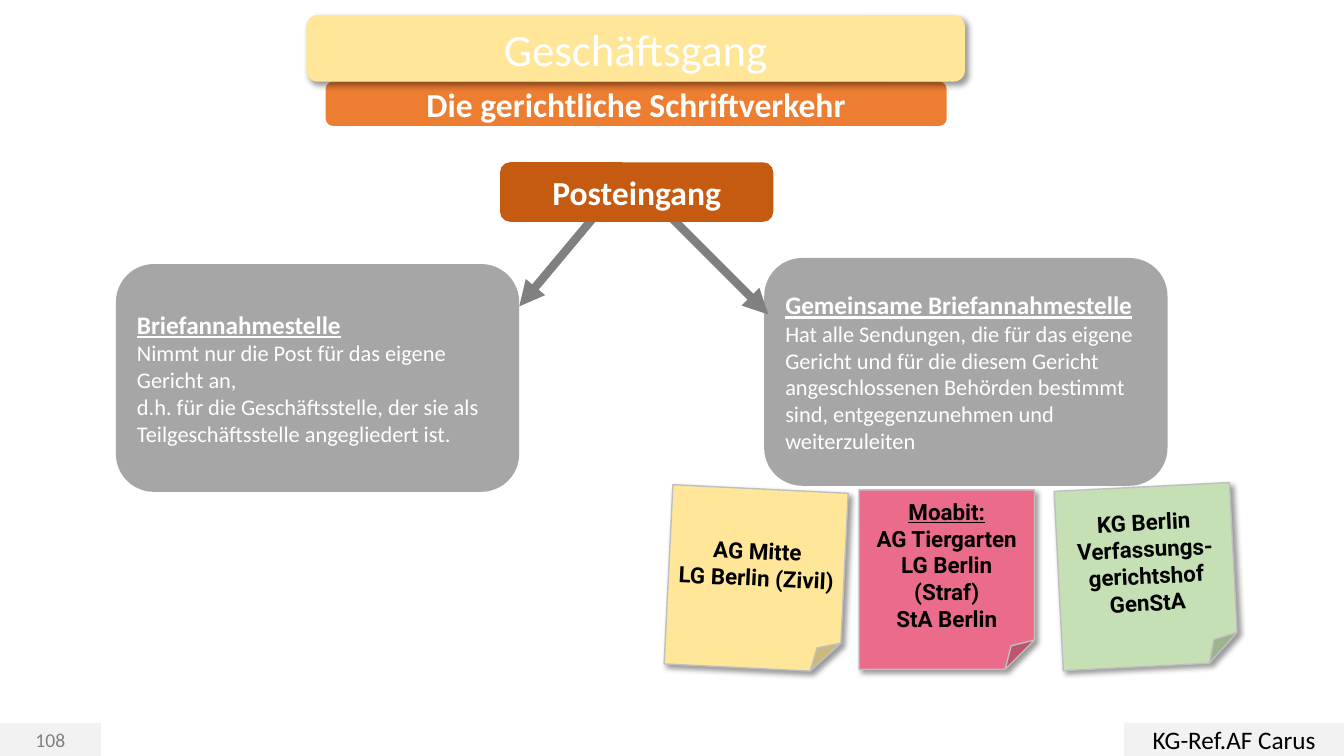
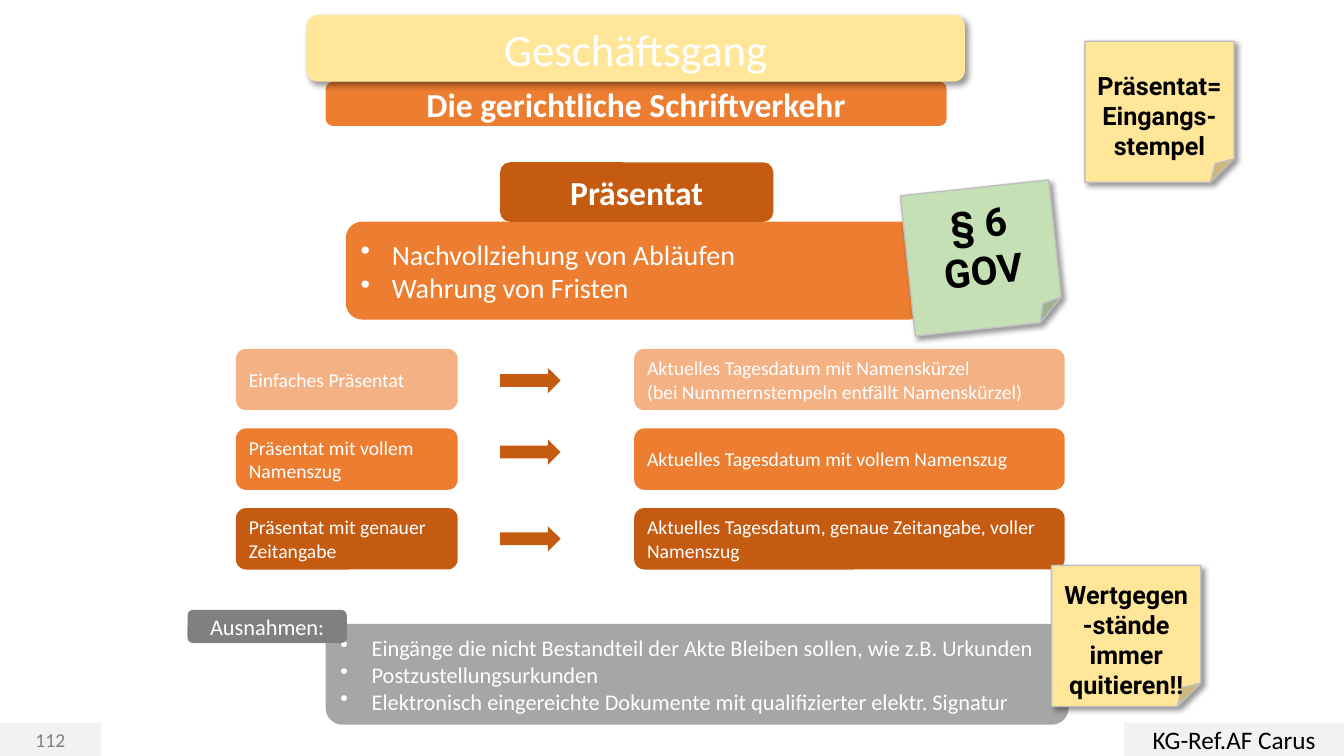
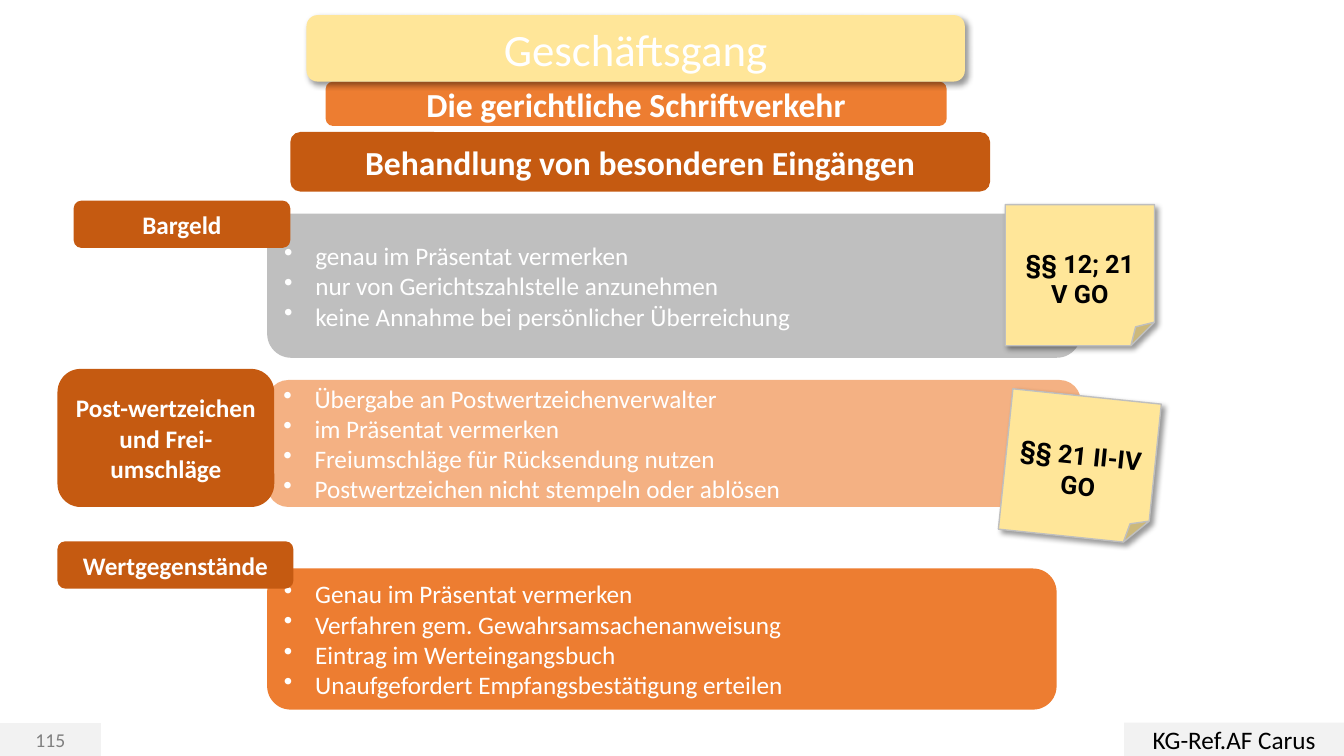
from lxml import etree
from pptx import Presentation
from pptx.dml.color import RGBColor
from pptx.enum import shapes, text
from pptx.oxml import ns
from pptx.util import Inches, Pt

COLORS = {
    "white": "FFFFFF", "black": "000000", "band": "F2F2F2",
    "yellow": "FFE699", "pink": "EA6C8A", "green": "C5E0B4",
    "peach": "F4B183", "orange": "ED7D31", "rust": "C55A11",
    "silver": "BFBFBF", "gray": "A6A6A6", "dark": "808080",
}
ROUND = shapes.MSO_SHAPE.ROUNDED_RECTANGLE
RECT = shapes.MSO_SHAPE.RECTANGLE
FOLD = shapes.MSO_SHAPE.FOLDED_CORNER
ARROW = shapes.MSO_SHAPE.RIGHT_ARROW
LEFT = text.PP_ALIGN.LEFT
CENTER = text.PP_ALIGN.CENTER


def add_box(page, area, fill, words="", size=18, kind=ROUND, bold=False, align=CENTER,
            color="white", font="Calibri", line=None, bullets=False, shadow=False):
    box = page.shapes.add_shape(kind, *[Inches(value) for value in area])
    box.fill.solid()
    box.fill.fore_color.rgb = RGBColor.from_string(COLORS[fill])
    if line:
        box.line.color.rgb = RGBColor.from_string(COLORS[line])
        box.line.width = Pt(1)
    else:
        box.line.fill.background()
    box.shadow.inherit = False
    if shadow:
        effects = box._element.spPr.find(ns.qn("a:effectLst"))
        outer = etree.SubElement(effects, ns.qn("a:outerShdw"), blurRad=str(Pt(4)),
                                 dist=str(Pt(3)), dir="2700000", algn="tl", rotWithShape="0")
        tint = etree.SubElement(outer, ns.qn("a:srgbClr"), val=COLORS["black"])
        etree.SubElement(tint, ns.qn("a:alpha"), val="40000")
    frame = box.text_frame
    frame.word_wrap = True
    frame.vertical_anchor = text.MSO_ANCHOR.MIDDLE
    frame.text = words
    for para in frame.paragraphs:
        para.alignment = align
        if bullets:
            properties = para._p.get_or_add_pPr()
            properties.set("marL", str(Inches(0.31)))
            properties.set("indent", str(-Inches(0.31)))
            etree.SubElement(properties, ns.qn("a:buChar"), char="•")
        for span in para.runs:
            span.font.name = font
            span.font.size = Pt(size)
            span.font.bold = bold
            span.font.color.rgb = RGBColor.from_string(COLORS[color])
    return box


def add_note(page, area, fill, words, size=18, turn=0, top=0.05):
    note = add_box(page, area, fill, words, size, FOLD, bold=True, color="black",
                   font="Roboto", line="silver", shadow=True)
    note.rotation = turn
    note.text_frame.margin_top = Inches(top)
    return note


deck = Presentation()
deck.slide_width = Inches(13.33)
deck.slide_height = Inches(7.5)

pages = []
for number in ("108", "112", "115"):
    page = deck.slides.add_slide(deck.slide_layouts[6])
    add_box(page, (0, 7.18, 1, 0.32), "band", number, 14, RECT, color="dark", line="band")
    add_box(page, (11.15, 7.17, 2.18, 0.33), "band", "KG-Ref.AF Carus", 18, RECT, color="black")
    add_box(page, (3.23, 0.81, 6.16, 0.44), "orange", "Die gerichtliche Schriftverkehr", 24, bold=True)
    add_box(page, (3.04, 0.15, 6.53, 0.66), "yellow", "Geschäftsgang", 32, shadow=True)
    pages.append(page)
inbox_page, stamp_page, special_page = pages

offices = [
    (1.15, 2.62, "Briefannahmestelle\nNimmt nur die Post für das eigene Gericht an,\n"
     "d.h. für die Geschäftsstelle, der sie als\nTeilgeschäftsstelle angegliedert ist."),
    (7.58, 2.56, "Gemeinsame Briefannahmestelle\nHat alle Sendungen, die für das eigene Gericht "
     "und für die diesem Gericht angeschlossenen Behörden bestimmt sind, "
     "entgegenzunehmen und weiterzuleiten"),
]
for left, top, words in offices:
    office = add_box(inbox_page, (left, top, 4, 2.26), "gray", words, 16, align=LEFT)
    heading = office.text_frame.paragraphs[0].runs[0].font
    heading.size = Pt(18)
    heading.bold = True
    heading.underline = True

courts = [
    (6.63, 4.85, "yellow", "AG Mitte\nLG Berlin (Zivil)", 2.8),
    (8.52, 4.86, "pink", "Moabit:\nAG Tiergarten\nLG Berlin (Straf)\nStA Berlin", 0),
    (10.5, 4.83, "green", "KG Berlin\nVerfassungs-gerichtshof\nGenStA", 357.1),
]
for left, top, fill, words, turn in courts:
    court = add_note(inbox_page, (left, top, 1.74, 1.78), fill, words, 16, turn)
    if fill == "pink":
        court.text_frame.paragraphs[0].runs[0].font.underline = True

for ends in ((5.91, 2.13, 5.15, 3.04), (6.62, 2.12, 7.62, 3.12)):
    link = inbox_page.shapes.add_connector(shapes.MSO_CONNECTOR.STRAIGHT,
                                           *[Inches(value) for value in ends])
    link.line.color.rgb = RGBColor.from_string(COLORS["dark"])
    link.line.width = Pt(6)
    etree.SubElement(link.line._get_or_add_ln(), ns.qn("a:tailEnd"), type="triangle")
    etree.SubElement(link._element.spPr, ns.qn("a:effectLst"))

add_box(inbox_page, (4.96, 1.61, 2.71, 0.59), "rust", "Posteingang", 24, bold=True)

add_box(stamp_page, (3.43, 2.2, 5.75, 0.97), "orange",
        "Nachvollziehung von Abläufen\nWahrung von Fristen", 20, align=LEFT, bullets=True)
add_box(stamp_page, (4.96, 1.61, 2.71, 0.59), "rust", "Präsentat", 24, bold=True)
add_note(stamp_page, (9, 1.86, 1.48, 1.4), "green", "§ 6 GOV", 28, 353.9)

stamps = [
    ("peach", 3.65, "Einfaches Präsentat",
     "Aktuelles Tagesdatum mit Namenskürzel\n(bei Nummernstempeln entfällt Namenskürzel)"),
    ("orange", 4.36, "Präsentat mit vollem Namenszug",
     "Aktuelles Tagesdatum mit vollem Namenszug"),
    ("rust", 5.22, "Präsentat mit genauer Zeitangabe",
     "Aktuelles Tagesdatum, genaue Zeitangabe, voller Namenszug"),
]
for row, (fill, arrow_top, name, content) in enumerate(stamps):
    top = 3.46 + row * 0.79
    add_box(stamp_page, (2.34, top, 2.2, 0.61), fill, name, 14, align=LEFT)
    add_box(stamp_page, (6.29, top, 4.27, 0.61), fill, content, 14, align=LEFT)
    add_box(stamp_page, (4.96, arrow_top, 0.6, 0.25), "rust", kind=ARROW)

add_box(stamp_page, (3.23, 6.19, 7.37, 1), "gray",
        "Eingänge die nicht Bestandteil der Akte Bleiben sollen, wie z.B. Urkunden\n"
        "Postzustellungsurkunden\n"
        "Elektronisch eingereichte Dokumente mit qualifizierter elektr. Signatur",
        16, align=LEFT, bullets=True)
add_box(stamp_page, (1.86, 6.05, 1.58, 0.33), "dark", "Ausnahmen:", 16)
add_note(stamp_page, (10.43, 5.61, 1.48, 1.4), "yellow", "Wertgegen-stände immer quitieren!!", top=0.35)
add_note(stamp_page, (10.76, 0.41, 1.48, 1.4), "yellow", "Präsentat=Eingangs-\nstempel", top=0.35)

add_box(special_page, (2.88, 1.31, 6.94, 0.59), "rust", "Behandlung von besonderen Eingängen", 24, bold=True)
items = [
    ((2.65, 2.12, 8.07, 1.43), "silver",
     "genau im Präsentat vermerken\nnur von Gerichtszahlstelle anzunehmen\n"
     "keine Annahme bei persönlicher Überreichung",
     (0.73, 1.99, 2.15, 0.47), "Bargeld"),
    ((2.65, 3.77, 8.07, 1.26), "peach",
     "Übergabe an Postwertzeichenverwalter\nim Präsentat vermerken\n"
     "Freiumschläge für Rücksendung nutzen\nPostwertzeichen nicht stempeln oder ablösen",
     (0.57, 3.66, 2.15, 1.37), "Post-wertzeichen und Frei-umschläge"),
    ((2.65, 5.64, 7.83, 1.4), "orange",
     "Genau im Präsentat vermerken\nVerfahren gem. Gewahrsamsachenanweisung\n"
     "Eintrag im Werteingangsbuch\nUnaufgefordert Empfangsbestätigung erteilen",
     (0.57, 5.37, 2.34, 0.47), "Wertgegenstände"),
]
for area, fill, rules, label_area, label in items:
    add_box(special_page, area, fill, rules, 18, align=LEFT, bullets=True)
    add_box(special_page, label_area, "rust", label, 18, bold=True)

for top, words, turn in ((2.03, "§§ 12; 21 V GO", 0), (3.93, "§§ 21 II-IV GO", 5.9)):
    add_note(special_page, (9.97, top, 1.48, 1.4), "yellow", words, turn=turn, top=0.35)

deck.save("out.pptx")
